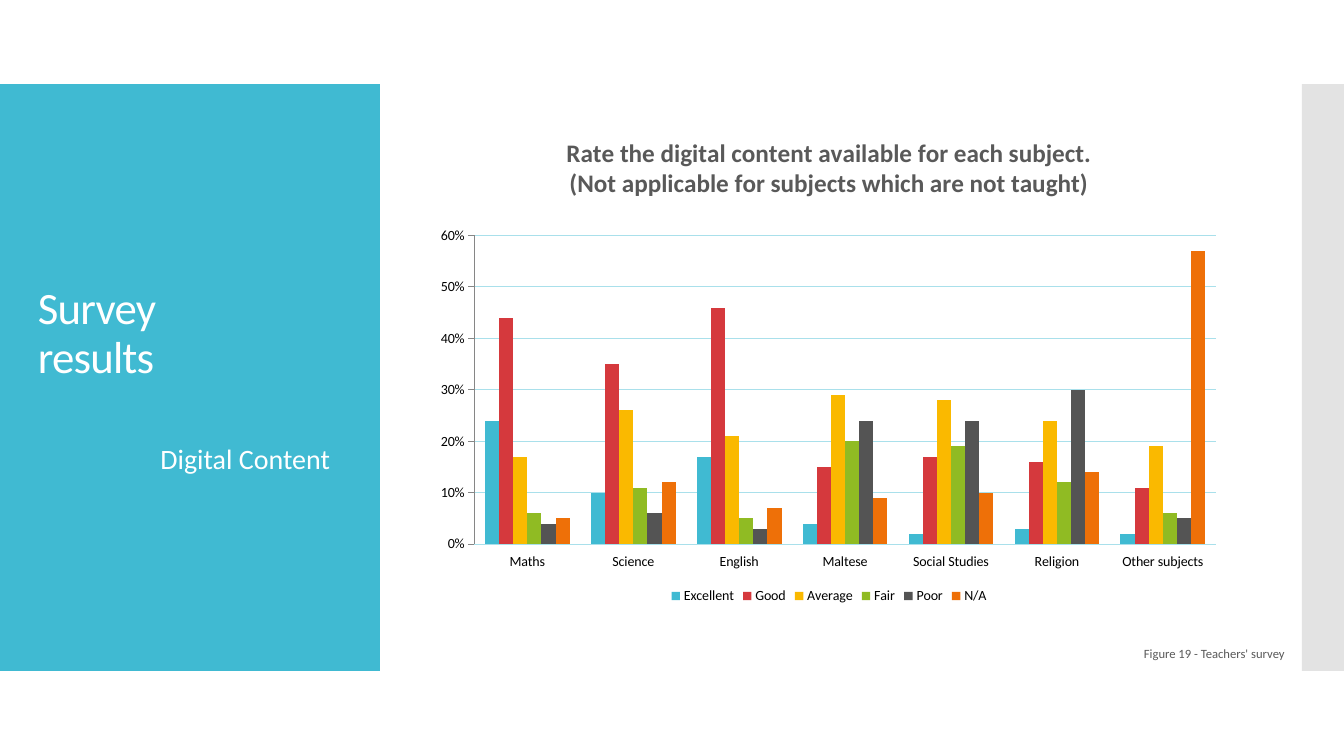
from lxml.etree import SubElement
from pptx import Presentation
from pptx.chart.data import CategoryChartData
from pptx.dml.color import RGBColor
from pptx.enum.chart import XL_CHART_TYPE as ChartType, XL_LEGEND_POSITION as LegendPos, XL_TICK_MARK as Tick
from pptx.enum.shapes import MSO_SHAPE as Shape
from pptx.enum.text import MSO_ANCHOR as Anchor, PP_ALIGN as Align
from pptx.oxml import parse_xml
from pptx.oxml.ns import nsdecls, qn
from pptx.util import Emu, Pt

COLORS = {
    "teal": "40BAD2", "red": "D5393D", "yellow": "FAB900", "green": "90BB23",
    "charcoal": "545454", "orange": "EE7008", "white": "FFFFFF", "black": "000000",
    "muted": "595959", "strip": "C8C8C8", "grid": "A9E0EB", "axis": "868686",
}
SUBJECTS = ["Maths", "Science", "English", "Maltese", "Social Studies", "Religion", "Other subjects"]
RATINGS = [
    ("Excellent", "teal", [0.24, 0.1, 0.17, 0.04, 0.02, 0.03, 0.02]),
    ("Good", "red", [0.44, 0.35, 0.46, 0.15, 0.17, 0.16, 0.11]),
    ("Average", "yellow", [0.17, 0.26, 0.21, 0.29, 0.28, 0.24, 0.19]),
    ("Fair", "green", [0.06, 0.11, 0.05, 0.2, 0.19, 0.12, 0.06]),
    ("Poor", "charcoal", [0.04, 0.06, 0.03, 0.24, 0.24, 0.3, 0.05]),
    ("N/A", "orange", [0.05, 0.12, 0.07, 0.09, 0.1, 0.14, 0.57]),
]
PLOT_AREA = {"x": 0.06, "y": 0.24, "w": 0.92, "h": 0.63}


def px(count):
    return Emu(round(count * 914400 / 100.8))


class SlideBuilder:
    font_name = "Calibri"

    def __init__(self, deck):
        self.slide = deck.slides.add_slide(deck.slide_layouts[6])
        self.shapes = self.slide.shapes

    def color(self, name):
        return RGBColor.from_string(COLORS[name])

    def style(self, font, size, color, bold=False):
        font.name, font.size, font.bold = self.font_name, Pt(size), bold
        font.color.rgb = self.color(color)

    def panel(self, box, color, opacity=100):
        panel = self.shapes.add_shape(Shape.RECTANGLE, *map(px, box))
        panel.shadow.inherit = False
        panel.fill.solid()
        panel.fill.fore_color.rgb = self.color(color)
        panel.line.fill.background()
        if opacity < 100:
            fill = panel.fill._xPr.find(qn("a:solidFill"))
            SubElement(fill[0], qn("a:alpha"), val=str(opacity * 1000))

    def text(self, box, words, size, color, align=Align.LEFT, anchor=Anchor.TOP,
             wrap=True, line_spacing=1.0, tracking=0):
        frame = self.shapes.add_textbox(*map(px, box)).text_frame
        frame.word_wrap, frame.vertical_anchor = wrap, anchor
        paragraph = frame.paragraphs[0]
        paragraph.text = words
        paragraph.alignment, paragraph.line_spacing = align, line_spacing
        self.style(paragraph.font, size, color)
        if tracking:
            for run in paragraph.runs:
                run.font._element.set("spc", str(tracking))

    def column_chart(self, box, title, categories, series, plot_area):
        data = CategoryChartData(number_format="0%")
        data.categories = categories
        for name, _, values in series:
            data.add_series(name, values)
        chart = self.shapes.add_chart(ChartType.COLUMN_CLUSTERED, *map(px, box), data).chart
        self.style(chart.font, 10, "black")

        # Title and legend
        chart.has_title = True
        chart.chart_title.include_in_layout = False
        chart.chart_title.text_frame.text = title
        for paragraph in chart.chart_title.text_frame.paragraphs:
            self.style(paragraph.font, 18, "muted", bold=True)
        chart.has_legend = True
        chart.legend.position = LegendPos.BOTTOM
        chart.legend.include_in_layout = False

        # Columns
        plot = chart.plots[0]
        plot.gap_width, plot.overlap, plot.vary_by_categories = 150, 0, False
        for column, (_, color, _) in zip(plot.series, series):
            column.format.fill.solid()
            column.format.fill.fore_color.rgb = self.color(color)

        # Axes
        chart.category_axis.format.line.fill.background()
        chart.category_axis.major_tick_mark = Tick.OUTSIDE
        scale = chart.value_axis
        scale.minimum_scale, scale.maximum_scale, scale.major_unit = 0, 0.6, 0.1
        scale.major_tick_mark = Tick.OUTSIDE
        scale.tick_labels.number_format = "0%"
        scale.tick_labels.number_format_is_linked = False
        for line, color in ((scale.format.line, "axis"), (scale.major_gridlines.format.line, "grid")):
            line.color.rgb = self.color(color)
            line.width = Pt(0.75)

        # Fixed inner plot area
        settings = {"layoutTarget": "inner", "xMode": "edge", "yMode": "edge", **plot_area}
        marks = "".join(f'<c:{key} val="{value}"/>' for key, value in settings.items())
        layout = parse_xml(f'<c:layout {nsdecls("c")}><c:manualLayout>{marks}</c:manualLayout></c:layout>')
        area = chart._chartSpace.chart.plotArea
        for automatic in area.findall(qn("c:layout")):
            area.remove(automatic)
        area.insert(0, layout)


def main():
    deck = Presentation()
    deck.slide_width, deck.slide_height = px(1344), px(756)
    survey = SlideBuilder(deck)

    # Side panels
    survey.panel((0, 84, 380, 587), "teal")
    survey.panel((1302, 84, 42, 587), "strip", opacity=50)

    # Heading and topic
    survey.text((28, 126, 312, 262), "Survey\vresults", 32, "white",
                anchor=Anchor.BOTTOM, line_spacing=0.9, tracking=-60)
    survey.text((28, 437, 312, 204), "Digital Content", 20, "white", align=Align.RIGHT)

    # Ratings chart and caption
    survey.column_chart(
        (426, 118, 806, 490),
        "Rate the digital content available for each subject.\n"
        "(Not applicable for subjects which are not taught)",
        SUBJECTS, RATINGS, PLOT_AREA)
    survey.text((1134, 641, 166, 25), "Figure 19 - Teachers' survey", 9, "muted", wrap=False)

    deck.save("out.pptx")


if __name__ == "__main__":
    main()
